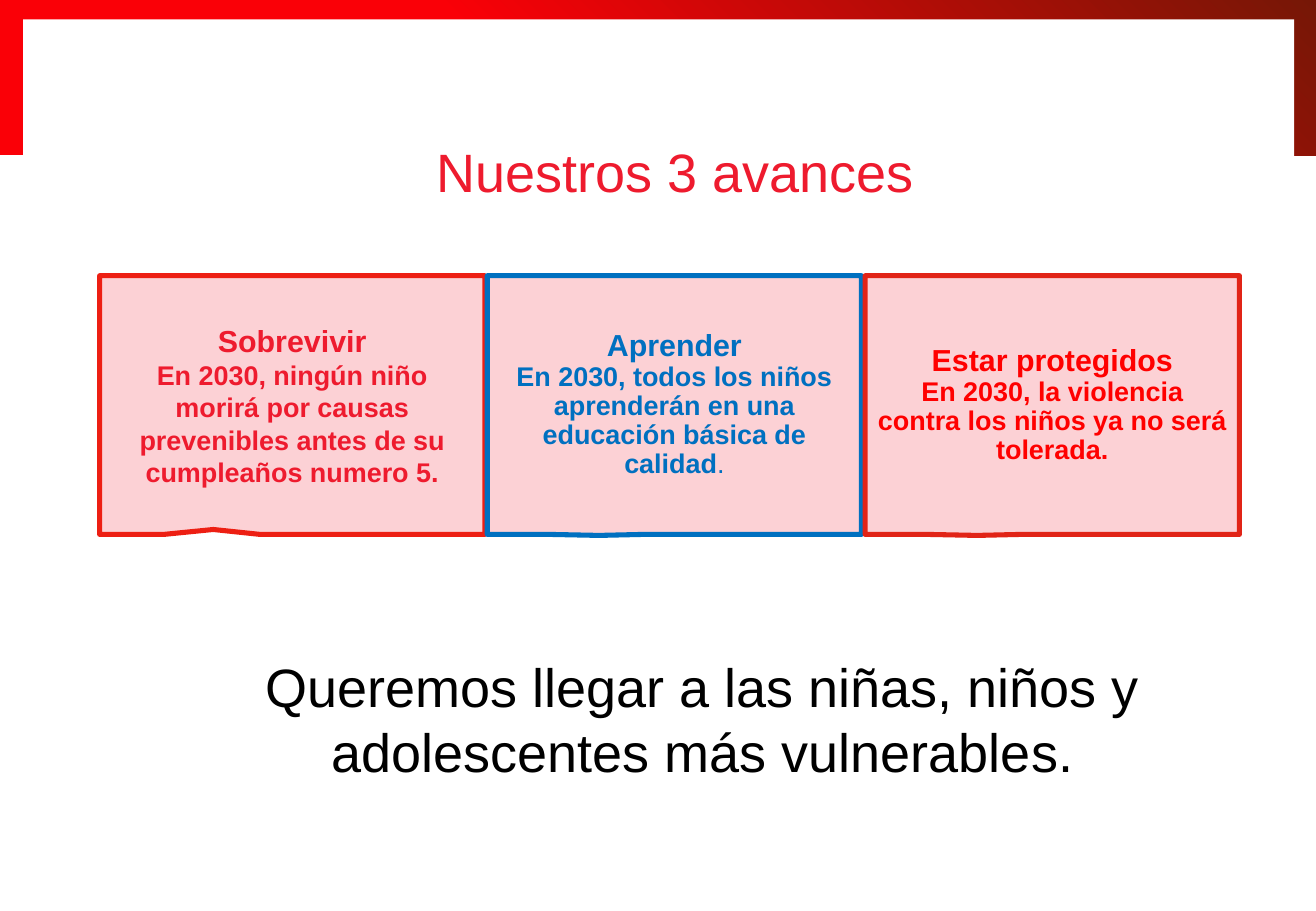
from pptx import Presentation
from pptx.dml.color import RGBColor
from pptx.enum.shapes import MSO_SHAPE
from pptx.enum.text import MSO_ANCHOR, PP_ALIGN
from pptx.util import Inches, Pt

RECTANGLE = MSO_SHAPE.RECTANGLE
CALLOUT = MSO_SHAPE.RECTANGULAR_CALLOUT
MIDDLE = MSO_ANCHOR.MIDDLE
CENTER = PP_ALIGN.CENTER

COLORS = {
    "white": "FFFFFF", "black": "000000", "pink": "FCD1D5",
    "bright": "FA0007", "maroon": "761706", "title": "EE1B2E",
    "blue": "0070C0", "red": "FF0000",
    "first_edge": "ED1F13", "last_edge": "E12417",
}


def rgb(name):
    return RGBColor.from_string(COLORS[name])


class SlideBuilder:
    font = "Arial"

    def __init__(self, slide):
        self.slide = slide

    def shape(self, kind, left, top, width, height):
        shape = self.slide.shapes.add_shape(
            kind, Inches(left), Inches(top), Inches(width), Inches(height))
        shape.shadow.inherit = False
        return shape

    def rectangle(self, left, top, width, height, fill):
        box = self.shape(RECTANGLE, left, top, width, height)
        box.fill.solid()
        box.fill.fore_color.rgb = rgb(fill)
        box.line.fill.background()
        return box

    def gradient_band(self, left, top, width, height, stops, angle):
        band = self.rectangle(left, top, width, height, "white")
        band.fill.gradient()
        band.fill.gradient_angle = angle
        for stop, (position, color) in zip(band.fill.gradient_stops, stops):
            stop.position = position
            stop.color.rgb = rgb(color)

    def style(self, span, size, color, bold=False):
        span.font.name = self.font
        span.font.size = Pt(size)
        span.font.bold = bold
        span.font.color.rgb = rgb(color)

    def callout(self, left, width, tip, edge, color, heading, body,
                ending="", compact=True):
        box = self.shape(CALLOUT, left, 2.27, width, 2.13)
        box.adjustments[0], box.adjustments[1] = tip
        box.fill.solid()
        box.fill.fore_color.rgb = rgb("pink")
        box.line.color.rgb = rgb(edge)
        box.line.width = Pt(3)
        frame = box.text_frame
        frame.word_wrap = True
        frame.vertical_anchor = MIDDLE
        para = frame.paragraphs[0]
        para.text = heading
        self.style(para.runs[0], 18, color, bold=True)
        # Compact callouts keep heading and body in one paragraph
        if compact:
            para.line_spacing = 0.9
            para.add_line_break()
        else:
            para.alignment = CENTER
            para = frame.add_paragraph()
        para.alignment = CENTER
        for text, bold in ((body, True), (ending, False)):
            if text:
                span = para.add_run()
                span.text = text
                self.style(span, 16, color, bold)

    def text(self, left, top, width, height, text, color):
        box = self.slide.shapes.add_textbox(
            Inches(left), Inches(top), Inches(width), Inches(height))
        box.text_frame.word_wrap = True
        para = box.text_frame.paragraphs[0]
        para.text = text
        para.alignment = CENTER
        self.style(para.runs[0], 32, color)


def main():
    deck = Presentation()
    deck.slide_width = Inches(10.83)
    deck.slide_height = Inches(7.5)
    page = SlideBuilder(deck.slides.add_slide(deck.slide_layouts[6]))

    # Red frame at the top
    page.gradient_band(0, 0, 10.83, 1.28,
                       [(0.4, "bright"), (1.0, "maroon")], 45)
    page.rectangle(0.19, 0.16, 10.46, 1.18, "white")

    # Title
    page.text(2.74, 1.09, 5.64, 0.64, "Nuestros 3 avances", "title")

    # Three goals
    page.callout(0.82, 3.17, (-0.205, 0.481), "first_edge", "title",
                 "Sobrevivir",
                 "En 2030, ningún niño morirá por causas prevenibles "
                 "antes de su cumpleaños numero 5.", compact=False)
    page.callout(4.01, 3.08, (-0.201, 0.504), "blue", "blue", "Aprender",
                 "En 2030, todos los niños aprenderán en una "
                 "educación básica de calidad", ending=".")
    page.callout(7.12, 3.08, (-0.201, 0.504), "last_edge", "red",
                 "Estar protegidos",
                 "En 2030, la violencia contra los niños ya no será tolerada.")

    # Closing statement
    page.text(1.37, 5.33, 8.83, 1.18,
              "Queremos llegar a las niñas, niños y adolescentes "
              "más vulnerables.", "black")

    deck.save("out.pptx")


if __name__ == "__main__":
    main()
